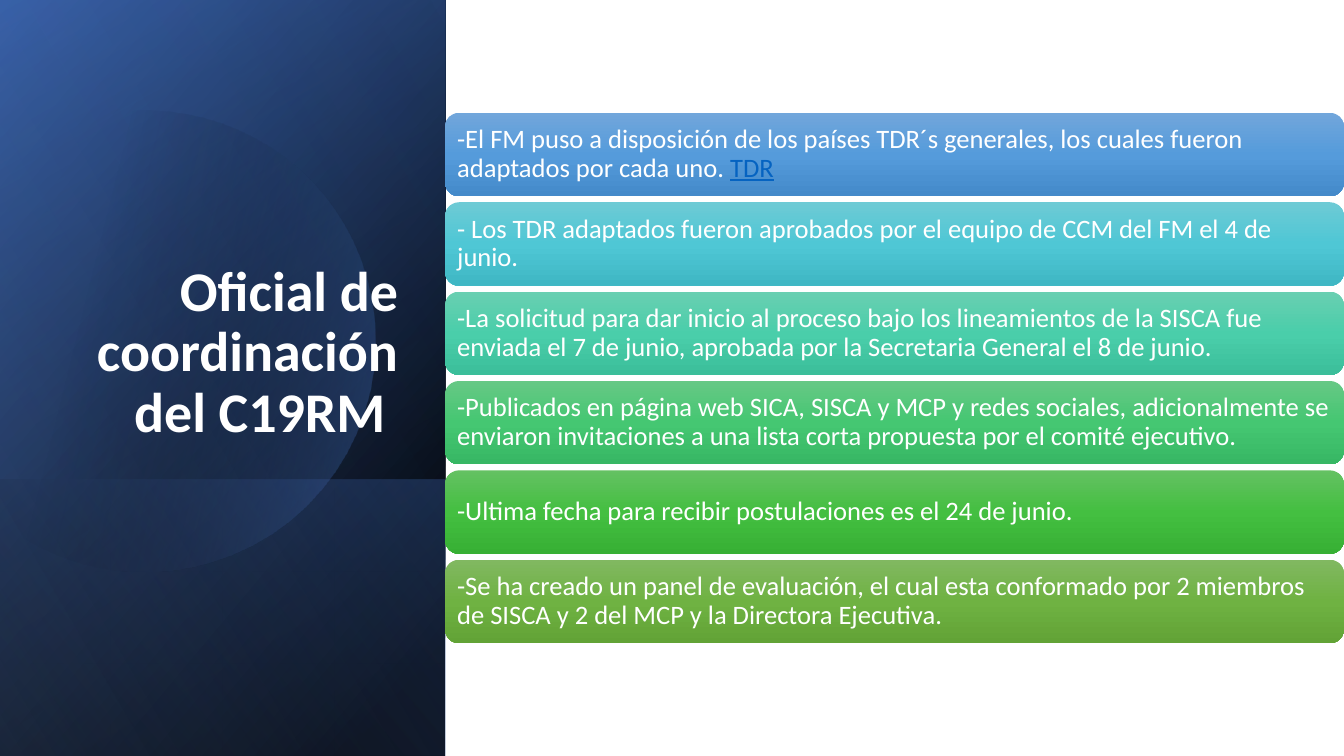
from dataclasses import dataclass

from pptx import Presentation
from pptx.dml.color import RGBColor
from pptx.enum.shapes import MSO_SHAPE
from pptx.enum.text import MSO_ANCHOR, MSO_AUTO_SIZE, PP_ALIGN
from pptx.oxml import parse_xml
from pptx.oxml.ns import nsdecls, qn
from pptx.shapes.autoshape import Shape
from pptx.slide import Slide
from pptx.util import Pt

RECT = MSO_SHAPE.RECTANGLE
ROUNDED = MSO_SHAPE.ROUNDED_RECTANGLE
MIDDLE = MSO_ANCHOR.MIDDLE
BOTTOM = MSO_ANCHOR.BOTTOM
LEFT = PP_ALIGN.LEFT
RIGHT = PP_ALIGN.RIGHT
NO_AUTOFIT = MSO_AUTO_SIZE.NONE

FONT = "Calibri"
WHITE = RGBColor(0xFF, 0xFF, 0xFF)
BLACK = RGBColor(0x00, 0x00, 0x00)
NAVY = RGBColor(0x2F, 0x55, 0x97)
BLUE = RGBColor(0x44, 0x72, 0xC4)
PALE_BLUE = RGBColor(0x8F, 0xAA, 0xDC)
LINK_BLUE = RGBColor(0x05, 0x63, 0xC1)

SLIDE_W, SLIDE_H = 960, 540
PANEL_W = 318
CARD_TOP, CARD_H, CARD_PITCH = 80.6, 59.6, 63.84


@dataclass(frozen=True)
class Stop:
    position: int
    color: RGBColor
    alpha: int = 100


@dataclass(frozen=True)
class Panel:
    """A band across the left panel, from its top down to the slide's foot."""
    top: float
    angle: float
    stops: tuple[Stop, ...]


@dataclass(frozen=True)
class Card:
    text: str
    colors: tuple[str, str, str]
    link: str = ""


BACK_PANELS = (
    Panel(0, 50, (Stop(8, BLACK), Stop(100, NAVY))),
    Panel(0, 30, (Stop(0, BLACK, 0), Stop(99, BLUE, 46))),
    Panel(342.7, 130, (Stop(2, BLUE, 29), Stop(100, BLACK, 30))),
)
FRONT_PANEL = Panel(0, 120, (Stop(0, BLACK, 0), Stop(99, PALE_BLUE, 11)))

# Disc outline: a start point, then curves (three points) and lines (one point).
DISC_START = (107.3, 79.2)
DISC_SEGMENTS = (
    ((177.1, 80.6), (241.2, 127.4), (261.4, 198)),
    ((286.6, 285.8), (236.2, 376.6), (149, 401.8)),
    ((94.3, 417.6), (38.2, 403.9), (-2.2, 370.1)),
    ((-10.8, 362.2),),
    ((-10.8, 126),),
    ((0, 115.9),),
    ((16.6, 102.2), (36, 92.2), (57.6, 85.7)),
    ((74.2, 81.4), (90.7, 79.2), (107.3, 79.2)),
)
DISC_STOPS = (Stop(29, BLACK, 0), Stop(100, BLUE, 43))

CARDS = (
    Card("-El FM puso a disposición de los países TDR´s generales, los cuales "
         "fueron adaptados por cada uno. ", ("71A6DB", "559BDB", "448ACA"), "TDR"),
    Card("- Los TDR adaptados fueron aprobados por el equipo de CCM del FM el "
         "4 de junio.", ("6DCAD5", "4FC7D5", "3FB7C4")),
    Card("-La solicitud para dar inicio al proceso bajo los lineamientos de la "
         "SISCA fue enviada el 7 de junio, aprobada por la Secretaria General "
         "el 8 de junio.", ("69CFB1", "4ACEAA", "3BBE9A")),
    Card("-Publicados en página web SICA, SISCA y MCP y redes sociales, "
         "adicionalmente se enviaron invitaciones a una lista corta propuesta "
         "por el comité ejecutivo.", ("66C885", "45C772", "37B764")),
    Card("-Ultima fecha para recibir postulaciones es el 24 de junio.",
         ("64C162", "44BF41", "37B034")),
    Card("-Se ha creado un panel de evaluación, el cual esta conformado por 2 "
         "miembros de SISCA y 2 del MCP y la Directora Ejecutiva.",
         ("81B861", "6FB242", "62A336")),
)


def paint(sp: Shape, stops: tuple[Stop, ...], angle: float) -> None:
    """Give a shape a linear gradient, no outline and no shadow."""
    gs = "".join(
        f'<a:gs pos="{s.position * 1000}"><a:srgbClr val="{s.color}">'
        f'<a:alpha val="{s.alpha * 1000}"/></a:srgbClr></a:gs>' for s in stops)
    sp.shadow.inherit = False
    sp.line.fill.background()
    sp.fill.background()
    props = sp._element.spPr
    props.replace(props.find(qn("a:noFill")), parse_xml(
        f'<a:gradFill {nsdecls("a")} rotWithShape="1"><a:gsLst>{gs}</a:gsLst>'
        f'<a:lin ang="{round(angle * 60000)}" scaled="0"/></a:gradFill>'))


def add_panel(slide: Slide, panel: Panel) -> None:
    """Draw a band turned a quarter and mirrored, so its gradient turns too."""
    w, h = SLIDE_H - panel.top, PANEL_W
    center_y = panel.top + w / 2
    sp = slide.shapes.add_shape(
        RECT, Pt((PANEL_W - w) / 2), Pt(center_y - h / 2), Pt(w), Pt(h))
    sp.rotation = 90
    sp._element.spPr.xfrm.set("flipH", "1")
    paint(sp, panel.stops, panel.angle)


def curve_points(p0: tuple, p1: tuple, p2: tuple, p3: tuple,
                 steps: int = 16) -> list[tuple[float, float]]:
    """Points along a cubic Bézier curve, without its start."""
    points = []
    for i in range(1, steps + 1):
        t = i / steps
        u = 1 - t
        points.append(tuple(
            u**3 * a + 3 * u * u * t * b + 3 * u * t * t * c + t**3 * d
            for a, b, c, d in zip(p0, p1, p2, p3)))
    return points


def add_disc(slide: Slide) -> None:
    points = [DISC_START]
    for segment in DISC_SEGMENTS:
        points += curve_points(points[-1], *segment) if len(segment) == 3 else segment
    outline = [(Pt(x), Pt(y)) for x, y in points]
    builder = slide.shapes.build_freeform(*outline[0])
    builder.add_line_segments(outline[1:], close=True)
    paint(builder.convert_to_shape(), DISC_STOPS, 13.9)


def add_card(slide: Slide, card: Card, top: float) -> None:
    sp = slide.shapes.add_shape(
        ROUNDED, Pt(PANEL_W), Pt(top), Pt(SLIDE_W - PANEL_W), Pt(CARD_H))
    paint(sp, tuple(Stop(50 * i, RGBColor.from_string(c))
                    for i, c in enumerate(card.colors)), 90)
    tf = sp.text_frame
    tf.word_wrap = True
    tf.vertical_anchor = MIDDLE
    tf.margin_left = tf.margin_right = tf.margin_top = tf.margin_bottom = Pt(5.7)
    p = tf.paragraphs[0]
    p.alignment = LEFT
    p.line_spacing = 0.9
    p.font.name = FONT
    p.font.size = Pt(19)
    r = p.add_run()
    r.text = card.text
    r.font.color.rgb = WHITE
    if card.link:
        r = p.add_run()
        r.text = card.link
        r.font.color.rgb = LINK_BLUE
        r.font.underline = True


def add_title(slide: Slide) -> None:
    sp = slide.shapes.title
    sp.left, sp.top, sp.width, sp.height = Pt(46), Pt(132.5), Pt(245.5), Pt(188.6)
    slide.shapes._spTree.append(sp._element)  # in front of the panels
    tf = sp.text_frame
    tf.word_wrap = True
    tf.auto_size = NO_AUTOFIT
    tf.vertical_anchor = BOTTOM
    p = tf.paragraphs[0]
    p.text = "Oficial de coordinación del C19RM "
    p.alignment = RIGHT
    p.line_spacing = 0.9
    p.font.name = FONT
    p.font.size = Pt(40)
    p.font.bold = True
    p.font.color.rgb = WHITE


def main() -> None:
    prs = Presentation()
    prs.slide_width, prs.slide_height = Pt(SLIDE_W), Pt(SLIDE_H)
    slide = prs.slides.add_slide(prs.slide_layouts.get_by_name("Title Only"))
    for panel in BACK_PANELS:
        add_panel(slide, panel)
    add_disc(slide)
    add_panel(slide, FRONT_PANEL)
    add_title(slide)
    for i, card in enumerate(CARDS):
        add_card(slide, card, CARD_TOP + i * CARD_PITCH)
    prs.save("out.pptx")


if __name__ == "__main__":
    main()
